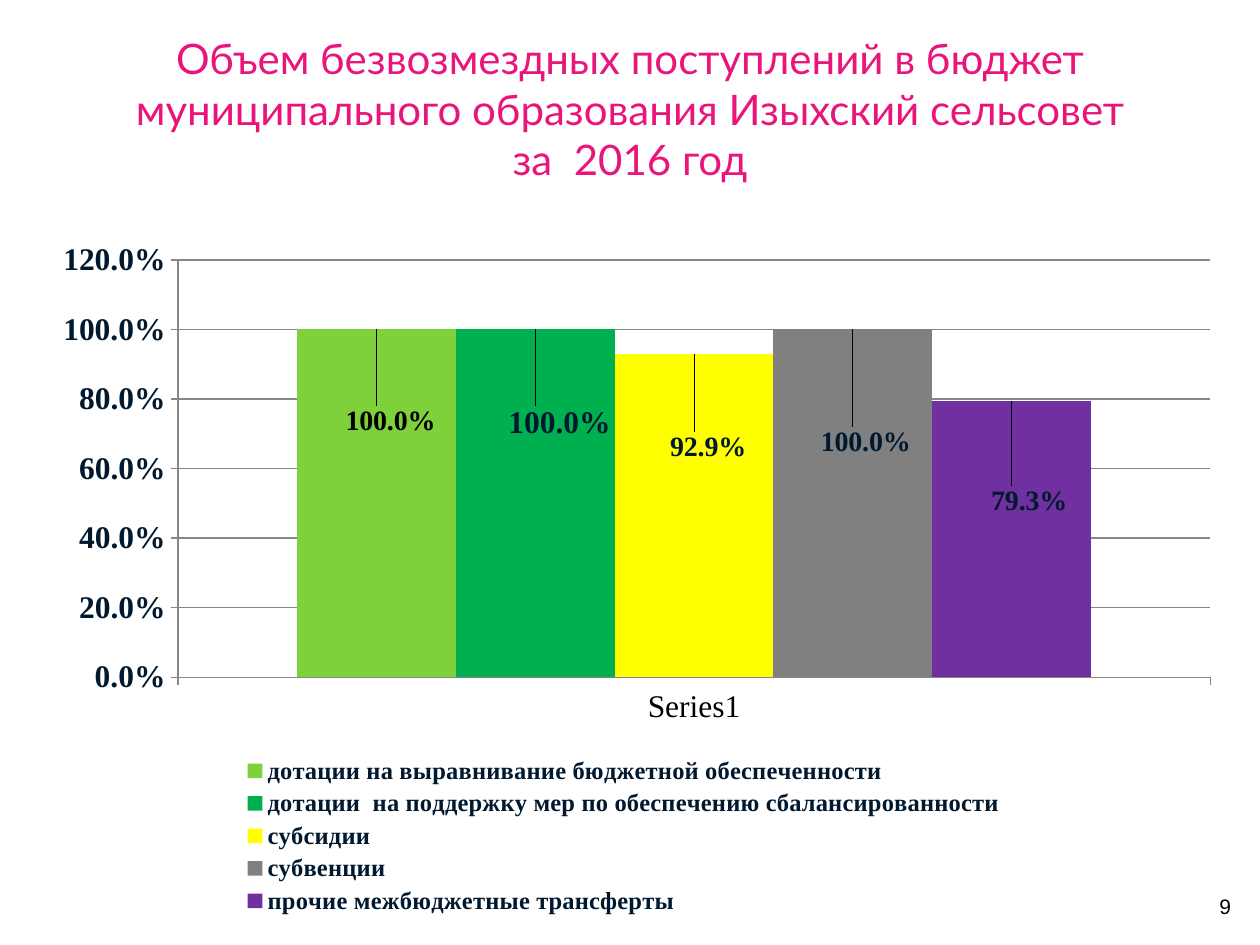
from lxml.etree import SubElement as Sub
from pptx import Presentation
from pptx.chart.data import CategoryChartData as Data
from pptx.dml.color import RGBColor as Rgb
from pptx.enum.chart import XL_CHART_TYPE as Kind
from pptx.enum.chart import XL_LABEL_POSITION as Spot
from pptx.enum.chart import XL_LEGEND_POSITION as Side
from pptx.enum.chart import XL_TICK_MARK as Tick
from pptx.enum.text import MSO_ANCHOR as Anchor
from pptx.enum.text import MSO_AUTO_SIZE as Fit
from pptx.enum.text import PP_ALIGN as Align
from pptx.oxml import parse_xml
from pptx.oxml.ns import nsdecls, qn
from pptx.util import Inches, Pt

COLORS = {
    "pink": "EA157A", "black": "000000", "navy": "00192F", "line": "868686",
    "lime": "7FD13B", "green": "00B050", "yellow": "FFFF00",
    "gray": "808080", "purple": "7030A0",
}
SERIF = "Times New Roman"
TITLE = [
    "Объем безвозмездных поступлений в бюджет "
    "муниципального образования Изыхский сельсовет",
    "за  2016 год",
]
GRANTS = [
    ("дотации на выравнивание бюджетной обеспеченности", 1, "lime", 16, "black", (0.012, 0.154)),
    ("дотации  на поддержку мер по обеспечению сбалансированности", 1, "green", 18, "navy", (0.021, 0.158)),
    ("субсидии", 0.929, "yellow", 16, "navy", (0.012, 0.157)),
    ("субвенции", 1, "gray", 16, "navy", (0.011, 0.183)),
    ("прочие межбюджетные трансферты", 0.793, "purple", 16, "navy", (0.015, 0.166)),
]


def style(font, name=SERIF, size=18, color="navy", bold=True):
    """Set the face, size, colour and weight of a font."""
    font.name, font.size, font.bold = name, Pt(size), bold
    font.color.rgb = Rgb.from_string(COLORS[color])


def place(shape, left, top, width, height):
    """Move and size a shape, in inches."""
    shape.left, shape.top = Inches(left), Inches(top)
    shape.width, shape.height = Inches(width), Inches(height)


def write(shape, lines, align, anchor, **look):
    """Fill a shape with one formatted paragraph per line."""
    frame = shape.text_frame
    frame.word_wrap, frame.auto_size = True, Fit.NONE
    frame.vertical_anchor = anchor
    for i, line in enumerate(lines):
        para = frame.add_paragraph() if i else frame.paragraphs[0]
        para.alignment = align
        run = para.add_run()
        run.text = line
        style(run.font, bold=False, **look)


def layout(**parts):
    """Return a manual chart layout with the given parts."""
    root = parse_xml(f"<c:layout {nsdecls('c')}><c:manualLayout/></c:layout>")
    for tag, value in parts.items():
        Sub(root[0], qn(f"c:{tag}")).set("val", str(value))
    return root


def rule(axis):
    """Format the line and tick marks of an axis."""
    axis.format.line.color.rgb = Rgb.from_string(COLORS["line"])
    axis.major_tick_mark = Tick.OUTSIDE
    axis.minor_tick_mark = Tick.NONE


def paint(bar, color, size, ink, shift):
    """Colour a series and shift its value label."""
    bar.format.fill.solid()
    bar.format.fill.fore_color.rgb = Rgb.from_string(COLORS[color])
    bar.invert_if_negative = False
    label = bar.points[0].data_label
    style(label.font, size=size, color=ink)
    label.position = Spot.OUTSIDE_END
    node = bar._element.xpath(".//c:dLbl")[0]
    node.insert(1, layout(x=shift[0], y=shift[1]))


def draw(slide):
    """Add the column chart of grants."""
    data = Data(number_format="0.0%")
    data.categories = ["Series1"]
    for name, value, *_ in GRANTS:
        data.add_series(name, [value])
    box = [Inches(n) for n in (0.39, 1.52, 9.22, 5.78)]
    chart = slide.shapes.add_chart(Kind.COLUMN_CLUSTERED, *box, data).chart
    chart.has_title = False
    style(chart.font, color="black", bold=False)
    plot = chart.plots[0]
    plot.gap_width, plot.overlap, plot.vary_by_categories = 150, 0, False
    for bar, grant in zip(plot.series, GRANTS):
        paint(bar, *grant[2:])

    axis = chart.value_axis
    axis.minimum_scale, axis.maximum_scale, axis.major_unit = 0, 1.2, 0.2
    axis.tick_labels.number_format = "0.0%"
    axis.tick_labels.number_format_is_linked = False
    style(axis.tick_labels.font)
    axis.major_gridlines.format.line.color.rgb = Rgb.from_string(COLORS["line"])
    rule(axis)
    rule(chart.category_axis)

    chart.has_legend = True
    legend = chart.legend
    legend.position, legend.include_in_layout = Side.BOTTOM, False
    style(legend.font, size=14)
    legend._element.find(qn("c:legendPos")).addnext(
        layout(xMode="edge", yMode="edge", x=0.16, y=0.77, w=0.67, h=0.23))
    area = chart._chartSpace.chart.plotArea
    for old in area.findall(qn("c:layout")):
        area.remove(old)
    area.insert(0, layout(layoutTarget="inner", xMode="edge", yMode="edge",
                          x=0.111, y=0.094, w=0.889, h=0.573))


def main():
    """Build and save the slide."""
    deck = Presentation()
    deck.slide_width, deck.slide_height = Inches(10), Inches(7.5)
    slide = deck.slides.add_slide(deck.slide_layouts[5])
    title = slide.shapes.title
    place(title, 0.59, 0.21, 8.82, 1.3)
    write(title, TITLE, Align.CENTER, Anchor.MIDDLE, name="Lato", size=24, color="pink")
    draw(slide)
    page = slide.shapes.add_textbox(0, 0, 0, 0)
    place(page, 7.64, 7.06, 2.13, 0.28)
    page.text_frame.margin_left = page.text_frame.margin_right = 0
    write(page, ["9"], Align.RIGHT, Anchor.BOTTOM, name="Arial", size=12, color="black")
    deck.save("out.pptx")


if __name__ == "__main__":
    main()
